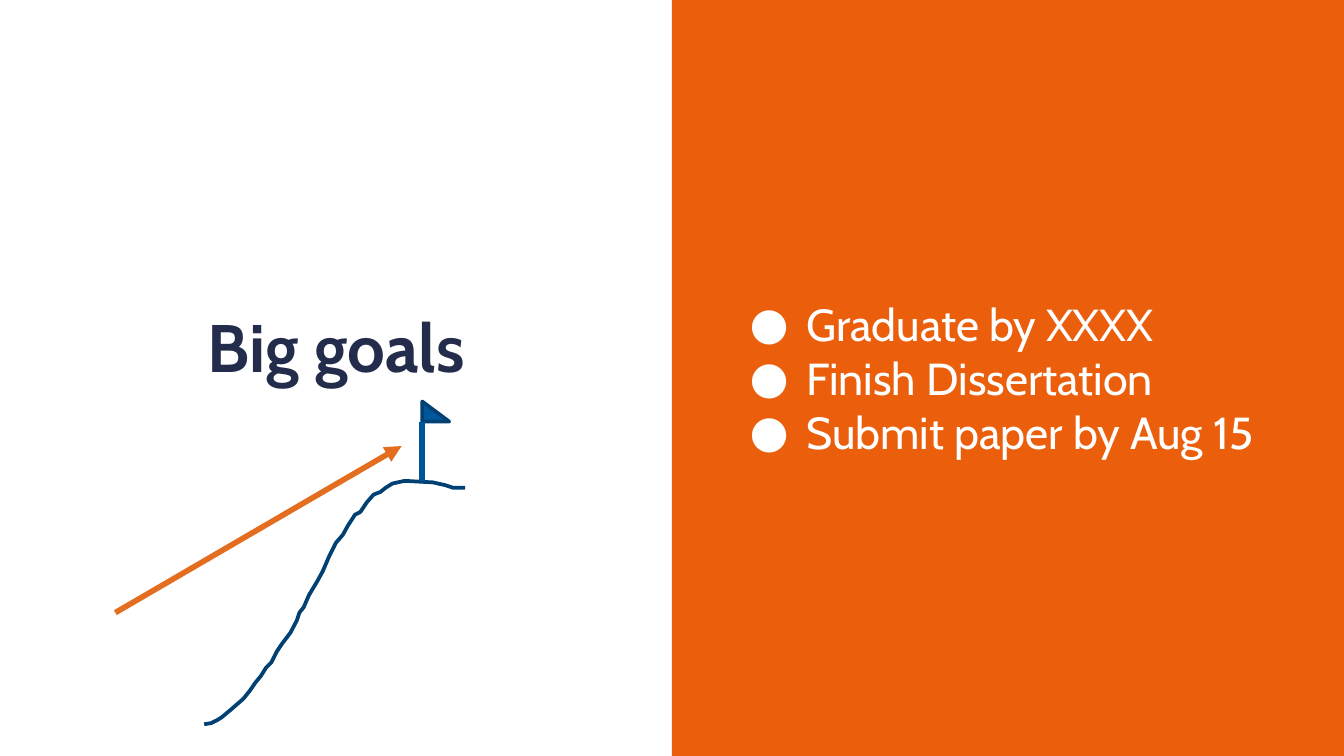
from lxml import etree
from pptx import Presentation
from pptx.dml.color import RGBColor
from pptx.enum.shapes import MSO_CONNECTOR, MSO_SHAPE
from pptx.enum.text import MSO_ANCHOR, MSO_AUTO_SIZE, PP_ALIGN
from pptx.oxml.ns import qn
from pptx.util import Cm, Pt

# Content
TITLE = "Big goals"
GOALS = ["Graduate by XXXX", "Finish Dissertation", "Submit paper by Aug 15"]
TITLE_FONT = dict(name="Cabin", size=Pt(36), bold=True)
GOAL_FONT = dict(name="Cabin", size=Pt(24), bold=False)
WHITE, NAVY, ORANGE, OUTLINE = "FFFFFF", "232D4B", "EB5F0C", "014073"

# Hillside from foot to summit, in cm
HILL = [
    (3.86, 13.69), (3.99, 13.67), (4.11, 13.61), (4.19, 13.56), (4.37, 13.41),
    (4.6, 13.21), (4.72, 13.06), (4.83, 12.9), (4.93, 12.78), (5.03, 12.62),
    (5.13, 12.52), (5.23, 12.32), (5.33, 12.17), (5.49, 11.96), (5.61, 11.73),
    (5.66, 11.58), (5.74, 11.48), (5.84, 11.25), (5.99, 11), (6.1, 10.8),
    (6.22, 10.52), (6.35, 10.26), (6.48, 10.11), (6.58, 9.93), (6.71, 9.73),
    (6.81, 9.68), (6.93, 9.5), (7.06, 9.35), (7.19, 9.3), (7.29, 9.22),
    (7.42, 9.14), (7.65, 9.09), (8.18, 9.12), (8.41, 9.17), (8.56, 9.22),
    (8.79, 9.22),
]
# Straight lines: start, end, colour, arrowhead
LINES = [
    ((7.98, 7.98), (7.98, 9.09), "005599", False),   # flagpole
    ((2.18, 11.58), (7.59, 8.43), "E46E20", True),   # climb
]


def rgb(code):
    return RGBColor.from_string(code)


def set_line(shape, color, width):
    shape.line.color.rgb = rgb(color)
    shape.line.width = Pt(width)


def set_frame(tf, anchor):
    values = dict(word_wrap=True, auto_size=MSO_AUTO_SIZE.NONE, vertical_anchor=anchor)
    values.update({f"margin_{side}": Cm(0.25) for side in ("left", "top", "right", "bottom")})
    for key, value in values.items():
        setattr(tf, key, value)


def set_font(p, color, values):
    for r in p.runs:
        for key, value in values.items():
            setattr(r.font, key, value)
        r.font.color.rgb = rgb(color)


def add_bullet(p, color):
    pPr = p._p.get_or_add_pPr()
    pPr.set("marL", str(Cm(1.27)))
    pPr.set("indent", str(-Cm(1.07)))
    clr = etree.SubElement(pPr, qn("a:buClr"))
    etree.SubElement(clr, qn("a:srgbClr"), val=color)
    etree.SubElement(pPr, qn("a:buFont"), typeface="Cabin")
    etree.SubElement(pPr, qn("a:buChar"), char="●")


prs = Presentation()
prs.slide_width, prs.slide_height = Cm(25.4), Cm(14.29)
s = prs.slides.add_slide(prs.slide_layouts[5])
s.background.fill.solid()
s.background.fill.fore_color.rgb = rgb(WHITE)


def add_filled(kind, box, color):
    sp = s.shapes.add_shape(kind, *map(Cm, box))
    sp.shadow.inherit = False
    sp.fill.solid()
    sp.fill.fore_color.rgb = rgb(color)
    return sp


# Right panel
panel = add_filled(MSO_SHAPE.RECTANGLE, (12.7, 0, 12.7, 14.29), ORANGE)
panel.line.fill.background()

# Title
title = s.shapes.title
title.left, title.top, title.width, title.height = map(Cm, (0.74, 3.89, 11.23, 3.66))
set_frame(title.text_frame, MSO_ANCHOR.BOTTOM)
title.text_frame.text = TITLE
p = title.text_frame.paragraphs[0]
p.alignment = PP_ALIGN.CENTER
set_font(p, NAVY, TITLE_FONT)

# Goal list
tf = s.shapes.add_textbox(*map(Cm, (13.72, 2.01, 10.67, 10.26))).text_frame
set_frame(tf, MSO_ANCHOR.MIDDLE)
tf.text = "\n".join(GOALS)
for p in tf.paragraphs:
    add_bullet(p, WHITE)
    set_font(p, WHITE, GOAL_FONT)

# Hill
points = [(Cm(x), Cm(y)) for x, y in HILL]
builder = s.shapes.build_freeform(*points[0])
builder.add_line_segments(points[1:], close=False)
hill = builder.convert_to_shape()
hill.shadow.inherit = False
hill.fill.background()
set_line(hill, OUTLINE, 2)

# Flag
flag = add_filled(MSO_SHAPE.RIGHT_TRIANGLE, (7.98, 7.59, 0.51, 0.38), "01579B")
set_line(flag, OUTLINE, 2)

# Flagpole and climbing arrow
for start, end, color, arrow in LINES:
    cn = s.shapes.add_connector(MSO_CONNECTOR.STRAIGHT, *map(Cm, start + end))
    set_line(cn, color, 3)
    if arrow:
        etree.SubElement(cn.line._get_or_add_ln(), qn("a:tailEnd"), type="triangle")
    etree.SubElement(cn._element.spPr, qn("a:effectLst"))

prs.save("out.pptx")
